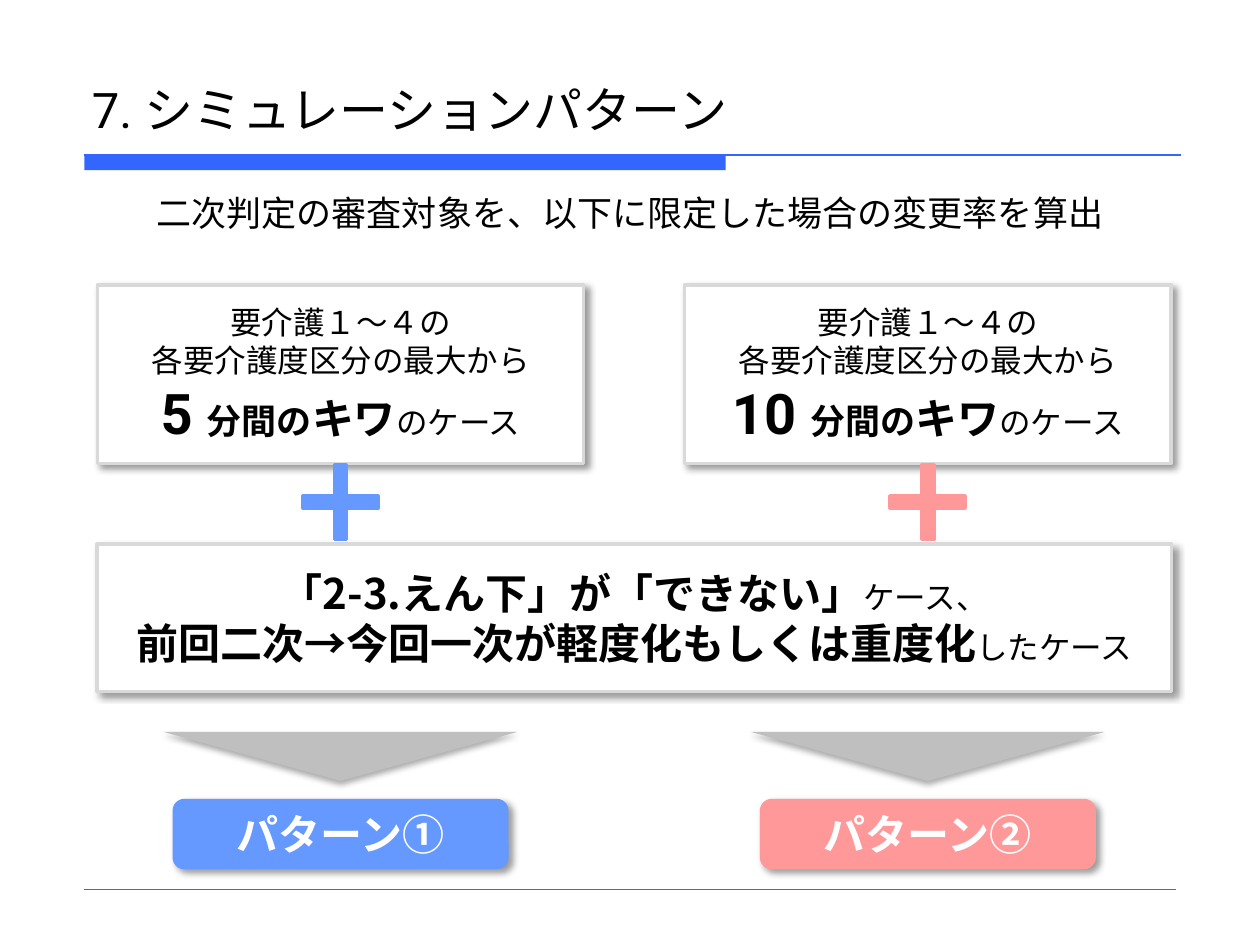
from lxml import etree
from pptx import Presentation
from pptx.dml.color import RGBColor
from pptx.enum import shapes, text
from pptx.oxml import ns
from pptx.util import Pt

COLORS = {
    "black": "000000",
    "white": "FFFFFF",
    "accent": "3366FF",
    "border": "D9D9D9",
    "arrow": "BFBFBF",
    "blue": "6699FF",
    "red": "FF9999",
}
JAPANESE = "Noto Sans CJK JP"
LATIN = "Roboto"
SHAPE = shapes.MSO_SHAPE
BOX_SHADOW = (40, 4, 3, 45)
ARROW_SHADOW = (32, 3.5, 2.2, 90)
CASE_WIDTH = 278
LEFT_CENTER = 194.6
COLUMN_STEP = 335.6
PATTERNS = [("5", "blue", "パターン①"), ("10", "red", "パターン②")]


def rgb(name):
    return RGBColor.from_string(COLORS[name])


def set_font(font, size, color="black", bold=False, name=JAPANESE):
    font.size, font.bold, font.name = Pt(size), bold, name
    font.color.rgb = rgb(color)
    east_asian = etree.SubElement(font._element, ns.qn("a:ea"))
    east_asian.set("typeface", JAPANESE)


def write(frame, lines, color="black", align=text.PP_ALIGN.CENTER):
    for index, parts in enumerate(lines):
        line = frame.add_paragraph() if index else frame.paragraphs[0]
        line.alignment = align
        if len(parts) == 1:
            words, *style = parts[0]
            line.add_run().text = words
            set_font(line.font, style[0], color, *style[1:])
            continue
        for words, size, *style in parts:
            run = line.add_run()
            run.text = words
            set_font(run.font, size, color, *style)


def add_shadow(shape, opacity, blur, distance, angle):
    effects = shape._element.spPr.find(ns.qn("a:effectLst"))
    shadow = etree.SubElement(
        effects, ns.qn("a:outerShdw"), blurRad=str(Pt(blur)),
        dist=str(Pt(distance)), dir=str(angle * 60000), algn="t", rotWithShape="0")
    color = etree.SubElement(shadow, ns.qn("a:srgbClr"), val=COLORS["black"])
    etree.SubElement(color, ns.qn("a:alpha"), val=str(opacity * 1000))


def add_figure(slide, kind, box, fill, border=None, shadow=None):
    figure = slide.shapes.add_shape(kind, *map(Pt, box))
    figure.shadow.inherit = False
    figure.fill.solid()
    figure.fill.fore_color.rgb = rgb(fill)
    if border:
        figure.line.color.rgb = rgb(border)
        figure.line.width = Pt(2)
    else:
        figure.line.fill.background()
    if shadow:
        add_shadow(figure, *shadow)
    return figure


def add_rule(slide, left, right, top, width):
    rule = slide.shapes.add_connector(
        shapes.MSO_CONNECTOR.STRAIGHT, Pt(left), Pt(top), Pt(right), Pt(top))
    rule.line.color.rgb = rgb("accent")
    rule.line.width = Pt(width)
    etree.SubElement(rule._element.spPr, ns.qn("a:effectLst"))


def add_label(slide, box, words, size, name, align, anchor, wrap):
    frame = slide.shapes.add_textbox(*map(Pt, box)).text_frame
    frame.word_wrap = wrap
    frame.vertical_anchor = anchor
    write(frame, [[(words, size, False, name)]], align=align)


def add_panel(slide, box, lines):
    panel = add_figure(slide, SHAPE.RECTANGLE, box, "white", "border", BOX_SHADOW)
    write(panel.text_frame, lines)


def add_case(slide, center, minutes):
    add_panel(slide, (center - CASE_WIDTH / 2, 162.7, CASE_WIDTH, 102.2), [
        [("要介護１～４の", 18)],
        [("各要介護度区分の最大から", 18)],
        [(minutes + " ", 32, True, LATIN), ("分間の", 20, True),
         ("キワ", 24, True), ("のケース", 18)],
    ])


def add_pattern(slide, center, color, name):
    label = add_figure(slide, SHAPE.ROUNDED_RECTANGLE,
                       (center - 96, 456.5, 192, 40.3), color, shadow=BOX_SHADOW)
    write(label.text_frame, [[(name, 24, True)]], "white")

    arrow = add_figure(slide, SHAPE.ISOSCELES_TRIANGLE,
                       (center - 101, 418.3, 202, 28), "arrow", shadow=ARROW_SHADOW)
    arrow._element.spPr.xfrm.set("flipV", "1")

    plus = add_figure(slide, SHAPE.MATH_PLUS,
                      (center - 29.2, 257.8, 58.4, 58.4), color, color)
    plus.adjustments[0] = 0.118


def main():
    deck = Presentation()
    deck.slide_width, deck.slide_height = Pt(720), Pt(540)
    slide = deck.slides.add_slide(deck.slide_layouts[6])

    add_figure(slide, SHAPE.RECTANGLE, (48.2, 88.6, 366.5, 8.6), "accent")
    add_rule(slide, 48.2, 674.6, 88.6, 0.75)
    add_rule(slide, 48.2, 671.8, 508.3, 0.25)
    add_label(slide, (45.4, 23.8, 630, 59), "7. シミュレーションパターン", 28, LATIN,
              text.PP_ALIGN.LEFT, text.MSO_ANCHOR.BOTTOM, True)
    add_label(slide, (79.9, 105.8, 560.2, 31.7),
              "二次判定の審査対象を、以下に限定した場合の変更率を算出", 20, JAPANESE,
              text.PP_ALIGN.CENTER, text.MSO_ANCHOR.TOP, False)

    add_panel(slide, (55.4, 311, 614.2, 84.2), [
        [("「2-3.えん下」が「できない」", 24, True), ("ケース、", 18)],
        [("前回二次→今回一次が軽度化もしくは重度化", 24, True), ("したケース", 18)],
    ])
    for column, (minutes, color, name) in enumerate(PATTERNS):
        center = LEFT_CENTER + column * COLUMN_STEP
        add_case(slide, center, minutes)
        add_pattern(slide, center, color, name)

    deck.save("out.pptx")


if __name__ == "__main__":
    main()
